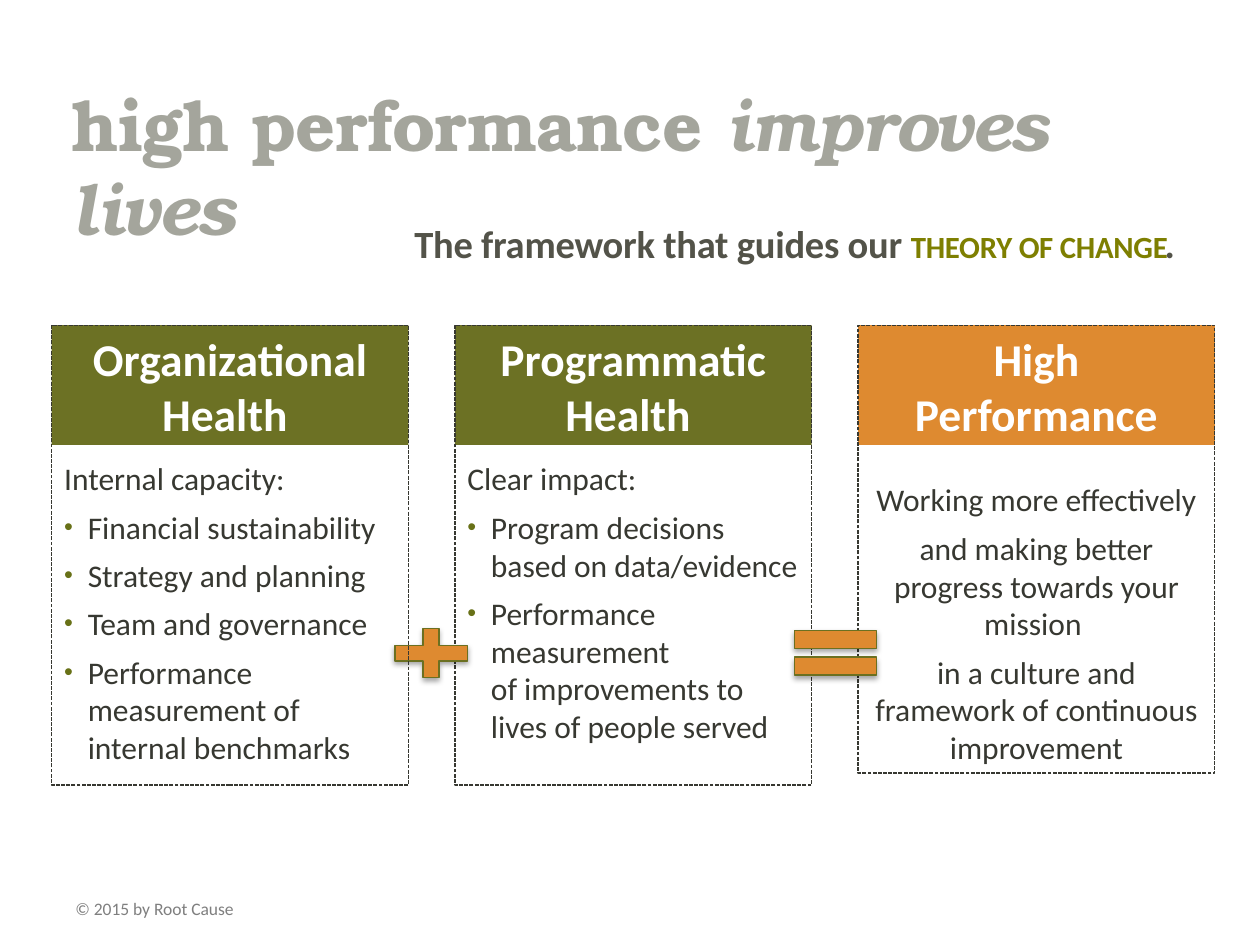
"""Build the slide showing how two kinds of health add up to high performance."""
from lxml import etree
from pptx import Presentation
from pptx import util as u
from pptx.dml import color as dml_color
from pptx.enum import dml, shapes, text
from pptx.oxml import ns

COLORS = {"olive": "6C7124", "orange": "DE8A30", "outline": "6B7021", "bullet": "687117",
          "body": "373831", "title": "A4A59C", "subtitle": "535349", "accent": "7E7F01",
          "footer": "7F7F7F", "white": "FFFFFF", "shadow": "000000"}

TITLE = [("high performance ", {}), ("improves lives", {"italic": True})]
SUBTITLE = [("The framework that guides our ", {}),
            ("theory of change", {"color": "accent", "caps": "small"}), (".", {})]
FOOTER = "© 2015 by Root Cause"
CARDS = [
    {"heading": "Organizational Health ", "fill": "olive", "lead": "Internal capacity:",
     "items": ["Financial sustainability", "Strategy and planning", "Team and governance",
               "Performance measurement of \ninternal benchmarks"],
     "bulleted": True, "height": 262.8},
    {"heading": "Programmatic Health ", "fill": "olive", "lead": "Clear impact:",
     "items": ["Program decisions based on data/evidence",
               "Performance measurement \nof improvements to lives of people served"],
     "bulleted": True, "height": 262.8},
    {"heading": "High Performance", "fill": "orange", "lead": "Working more effectively",
     "items": ["and making better progress towards your mission ",
               "in a culture and framework of continuous improvement"],
     "bulleted": False, "height": 256},
]
SYMBOLS = [(shapes.MSO_SHAPE.MATH_PLUS, 218.2, 354.2, 56.2, 38.2),
           (shapes.MSO_SHAPE.MATH_EQUAL, 445.7, 351.4, 63.4, 43.2)]

CARD_LEFT, CARD_TOP, CARD_WIDTH, CARD_STEP, HEADER_HEIGHT = 29.6, 185.8, 203.8, 230.4, 68.4
INDENT = 13.5


def rgb(name):
    return dml_color.RGBColor.from_string(COLORS[name])


def add_element(parent, tag, **attributes):
    element = etree.SubElement(parent, ns.qn(tag))
    for key, value in attributes.items():
        element.set(key, str(value))
    return element


def write(paragraph, content, *, size, color, font="Calibri", bold=False, italic=False,
          spacing=None, caps=None, align=None, before=None, line_spacing=None, bullet=False):
    if align is not None:
        paragraph.alignment = align
    if before is not None:
        paragraph.space_before = u.Pt(before)
    if line_spacing is not None:
        paragraph.line_spacing = line_spacing
    if bullet:
        properties = paragraph._p.get_or_add_pPr()
        properties.set("marL", str(u.Pt(INDENT)))
        properties.set("indent", str(-u.Pt(INDENT)))
        add_element(add_element(properties, "a:buClr"), "a:srgbClr", val=COLORS["bullet"])
        add_element(properties, "a:buSzPct", val=80000)
        add_element(properties, "a:buFont", typeface="Arial")
        add_element(properties, "a:buChar", char="•")
    for index, line in enumerate(content.split("\n")):
        if index:
            paragraph.add_line_break()
        run = paragraph.add_run()
        run.text = line
        run.font.name, run.font.size = font, u.Pt(size)
        run.font.bold, run.font.italic = bold, italic
        run.font.color.rgb = rgb(color)
        if spacing is not None:
            run.font._element.set("spc", str(round(spacing * 100)))
        if caps:
            run.font._element.set("cap", caps)


def add_box(slide, left, top, width, height, anchor=text.MSO_ANCHOR.TOP):
    box = slide.shapes.add_textbox(u.Pt(left), u.Pt(top), u.Pt(width), u.Pt(height))
    box.text_frame.word_wrap = True
    box.text_frame.vertical_anchor = anchor
    return box.text_frame.paragraphs[0]


def add_shape(slide, kind, left, top, width, height, fill=None):
    shape = slide.shapes.add_shape(kind, u.Pt(left), u.Pt(top), u.Pt(width), u.Pt(height))
    shape.shadow.inherit = False
    if fill:
        shape.fill.solid()
        shape.fill.fore_color.rgb = rgb(fill)
    else:
        shape.fill.background()
    shape.line.fill.background()
    return shape


def set_line(shape, color):
    shape.line.color.rgb = rgb(color)
    shape.line.width = u.Pt(0.75)


def add_card(slide, left, card):
    shape = add_shape(slide, shapes.MSO_SHAPE.RECTANGLE, left, CARD_TOP, CARD_WIDTH, card["height"])
    set_line(shape, "body")
    shape.line.dash_style = dml.MSO_LINE.SQUARE_DOT
    frame = shape.text_frame
    frame.word_wrap = True
    frame.vertical_anchor = text.MSO_ANCHOR.TOP
    bulleted = card["bulleted"]
    align = text.PP_ALIGN.LEFT if bulleted else text.PP_ALIGN.CENTER
    write(frame.paragraphs[0], card["heading"], size=26, color="white", bold=True,
          align=text.PP_ALIGN.CENTER)
    write(frame.add_paragraph(), card["lead"], size=18, color="body", align=align,
          line_spacing=1.5, before=0 if bulleted else 12)
    for item in card["items"]:
        write(frame.add_paragraph(), item, size=18, color="body", align=align,
              before=6, bullet=bulleted)


def add_symbol(slide, kind, *place):
    shape = add_shape(slide, kind, *place, fill="orange")
    set_line(shape, "outline")
    effects = shape._element.spPr.find(ns.qn("a:effectLst"))
    shadow = add_element(effects, "a:outerShdw", blurRad=u.Pt(3.1), dist=u.Pt(1.8),
                         dir=5400000, rotWithShape=0)
    shade = add_element(shadow, "a:srgbClr", val=COLORS["shadow"])
    add_element(shade, "a:alpha", val=35000)


def main():
    presentation = Presentation()
    presentation.slide_width, presentation.slide_height = u.Pt(720), u.Pt(540)
    slide = presentation.slides.add_slide(presentation.slide_layouts[6])

    write(add_box(slide, 36, 509.8, 120.2, 19.4), FOOTER, size=10, color="footer")
    lefts = [CARD_LEFT + index * CARD_STEP for index in range(len(CARDS))]
    for left, card in zip(lefts, CARDS):
        add_shape(slide, shapes.MSO_SHAPE.RECTANGLE, left, CARD_TOP, CARD_WIDTH,
                  HEADER_HEIGHT, fill=card["fill"])

    title = add_box(slide, 33.8, 61.9, 668.2, 65.5, text.MSO_ANCHOR.MIDDLE)
    for content, style in TITLE:
        write(title, content, size=40, color="title", font="TeX Gyre Bonum", bold=True,
              spacing=-0.5, **style)

    add_card(slide, lefts[2], CARDS[2])
    add_card(slide, lefts[1], CARDS[1])
    for symbol in SYMBOLS:
        add_symbol(slide, *symbol)
    add_card(slide, lefts[0], CARDS[0])

    subtitle = add_box(slide, 229.7, 122.4, 461.5, 33.8)
    for content, style in SUBTITLE:
        write(subtitle, content, **{"size": 22, "color": "subtitle", "bold": True,
                                    "spacing": -0.1, **style})
    presentation.save("out.pptx")


if __name__ == "__main__":
    main()
